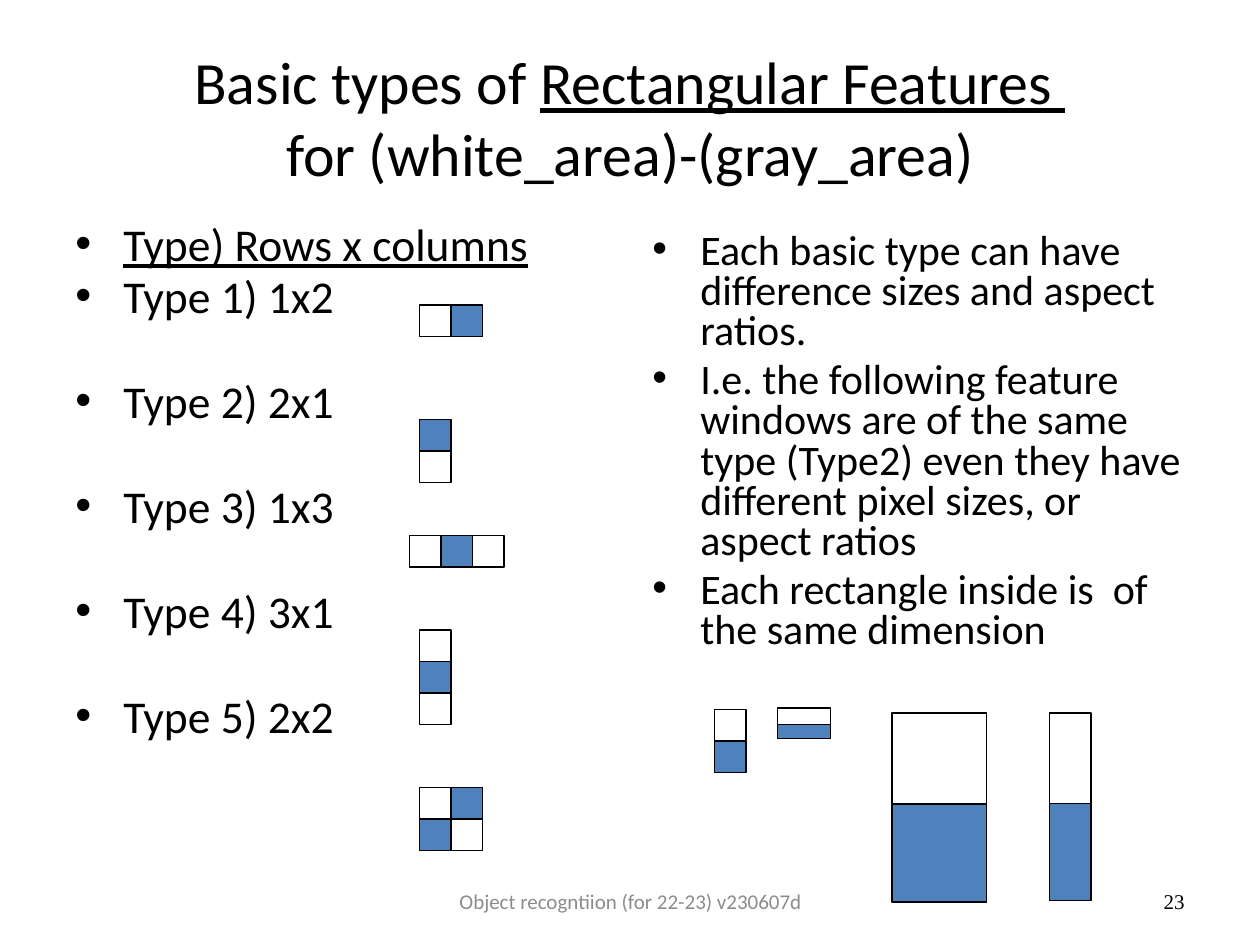
from dataclasses import dataclass

from lxml import etree
from pptx import Presentation
from pptx.dml.color import RGBColor
from pptx.enum import shapes, text
from pptx.oxml import ns
from pptx.util import Inches, Pt


@dataclass(frozen=True)
class Theme:
    font: str = "Calibri"
    number_font: str = "Times New Roman"
    ink: RGBColor = RGBColor(0x00, 0x00, 0x00)
    muted: RGBColor = RGBColor(0x8C, 0x8C, 0x8C)
    gray_area: RGBColor = RGBColor(0x4F, 0x81, 0xBD)
    title: float = 34.2
    types: float = 26
    notes: float = 24
    footer: float = 12
    outline: float = 0.75
    line_spacing: float = 0.8
    gap: float = 4.8
    wide_gap: float = 35


@dataclass(frozen=True)
class Box:
    left: float
    top: float
    width: float
    height: float


@dataclass(frozen=True)
class Bullet:
    words: str
    gap: float
    underline: bool = False


@dataclass(frozen=True)
class Feature:
    """A grid of W (white) and G (gray) cells, one string per row."""
    left: float
    top: float
    rows: tuple[str, ...]
    cell_width: float = 0.25
    row_heights: tuple[float, ...] = (0.25, 0.25, 0.25)


THEME = Theme()

BASIC_TYPES = [
    Feature(3.33, 2.42, ("WG",)),
    Feature(3.33, 3.33, ("G", "W")),
    Feature(3.25, 4.25, ("WGW",)),
    Feature(3.33, 5, ("W", "G", "W")),
    Feature(3.33, 6.25, ("WG", "GW")),
]
TYPE2_SIZES = [
    Feature(5.67, 5.63, ("W", "G")),
    Feature(6.17, 5.62, ("W", "G"), 0.42, (0.13, 0.11)),
    Feature(7.08, 5.66, ("W", "G"), 0.75, (0.72, 0.78)),
    Feature(8.33, 5.66, ("W", "G"), 0.33, (0.72, 0.77)),
]
TYPE_LIST = [
    Bullet("Type) Rows x columns", THEME.gap, underline=True),
    Bullet("Type 1) 1x2", THEME.gap),
    Bullet("Type 2) 2x1", THEME.wide_gap),
    Bullet("Type 3) 1x3", THEME.wide_gap),
    Bullet("Type 4) 3x1", THEME.wide_gap),
    Bullet("Type 5) 2x2", THEME.wide_gap),
]
NOTES = [
    Bullet("Each basic type can have difference sizes and aspect ratios.", THEME.gap),
    Bullet("I.e. the following feature windows are of the same type (Type2) "
           "even they have different pixel sizes, or aspect ratios", THEME.gap),
    Bullet("Each rectangle inside is  of the same dimension", THEME.gap),
]


def add_frame(slide, box: Box, anchor=text.MSO_ANCHOR.TOP):
    area = slide.shapes.add_textbox(Inches(box.left), Inches(box.top),
                                    Inches(box.width), Inches(box.height))
    frame = area.text_frame
    frame.word_wrap = True
    frame.vertical_anchor = anchor
    return frame


def add_run(paragraph, words: str, size: float, color: RGBColor = THEME.ink,
            font: str = THEME.font, underline: bool = False) -> None:
    run = paragraph.add_run()
    run.text = words
    run.font.name = font
    run.font.size = Pt(size)
    run.font.color.rgb = color
    run.font.underline = underline


def add_bullets(slide, box: Box, bullets: list[Bullet], size: float) -> None:
    frame = add_frame(slide, box)
    for index, bullet in enumerate(bullets):
        paragraph = frame.add_paragraph() if index else frame.paragraphs[0]
        paragraph.line_spacing = THEME.line_spacing
        paragraph.space_before = Pt(bullet.gap)
        # Hanging bullet
        properties = paragraph._p.get_or_add_pPr()
        properties.set("marL", str(Inches(0.38)))
        properties.set("indent", str(Inches(-0.38)))
        etree.SubElement(properties, ns.qn("a:buFont"), typeface="Arial")
        etree.SubElement(properties, ns.qn("a:buChar"), char="•")
        add_run(paragraph, bullet.words, size, underline=bullet.underline)


def add_line(slide, box: Box, words: str, align, color: RGBColor, font: str) -> None:
    paragraph = add_frame(slide, box, text.MSO_ANCHOR.MIDDLE).paragraphs[0]
    paragraph.alignment = align
    add_run(paragraph, words, THEME.footer, color, font)


def draw_feature(canvas, feature: Feature) -> None:
    top = feature.top
    for row, height in zip(feature.rows, feature.row_heights):
        for column, area in enumerate(row):
            left = feature.left + column * feature.cell_width
            cell = canvas.add_shape(shapes.MSO_SHAPE.RECTANGLE, Inches(left), Inches(top),
                                    Inches(feature.cell_width), Inches(height))
            cell.shadow.inherit = False
            cell.line.color.rgb = THEME.ink
            cell.line.width = Pt(THEME.outline)
            if area == "G":
                cell.fill.solid()
                cell.fill.fore_color.rgb = THEME.gray_area
            else:
                cell.fill.background()
        top += height


def main() -> None:
    deck = Presentation()
    deck.slide_width, deck.slide_height = Inches(10), Inches(7.5)
    slide = deck.slides.add_slide(deck.slide_layouts[6])

    # Title
    title = add_frame(slide, Box(0.5, 0.3, 9, 1.25), text.MSO_ANCHOR.MIDDLE).paragraphs[0]
    title.alignment = text.PP_ALIGN.CENTER
    add_run(title, "Basic types of ", THEME.title)
    add_run(title, "Rectangular Features ", THEME.title, underline=True)
    title.add_line_break()
    add_run(title, "for (white_area)-(gray_area)", THEME.title)

    # Two columns of bullets
    add_bullets(slide, Box(0.5, 1.75, 4.42, 4.95), TYPE_LIST, THEME.types)
    add_bullets(slide, Box(5.08, 1.8, 4.42, 3.7), NOTES, THEME.notes)

    # Footer and slide number
    add_line(slide, Box(3.42, 6.95, 3.17, 0.4), "Object recogntiion (for 22-23) v230607d",
             text.PP_ALIGN.CENTER, THEME.muted, THEME.font)
    add_line(slide, Box(7.17, 6.95, 2.33, 0.4), "23",
             text.PP_ALIGN.RIGHT, THEME.ink, THEME.number_font)

    # The five basic types, grouped, then type 2 in other sizes
    basic_group = slide.shapes.add_group_shape()
    for feature in BASIC_TYPES:
        draw_feature(basic_group.shapes, feature)
    for feature in TYPE2_SIZES:
        draw_feature(slide.shapes, feature)

    deck.save("out.pptx")


if __name__ == "__main__":
    main()
